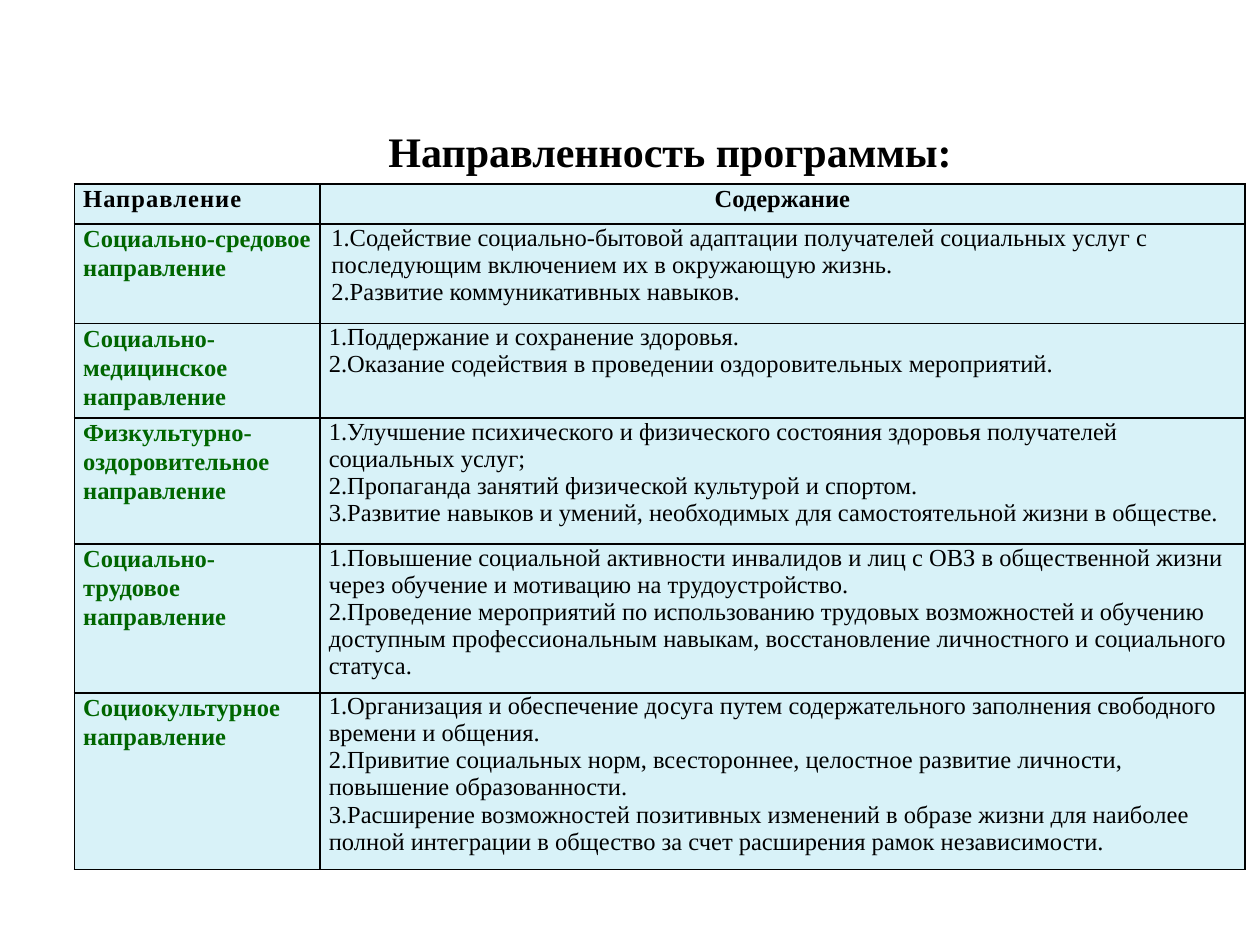
from dataclasses import dataclass

from lxml import etree
from pptx import Presentation
from pptx.dml.color import RGBColor
from pptx.enum.text import MSO_AUTO_SIZE, PP_ALIGN
from pptx.oxml.ns import qn
from pptx.util import Inches, Pt

CENTER, LEFT = PP_ALIGN.CENTER, PP_ALIGN.LEFT
FIT = MSO_AUTO_SIZE.SHAPE_TO_FIT_TEXT
FONT = "Times New Roman"
BLACK, GREEN, PALE = "000000", "006600", "D8F2F8"
WIDTHS = [1.95, 7.34]


@dataclass
class Row:
    height: float
    name: str
    items: list[str]
    indent: float = 0


HEAD = Row(0.32, "Направление", ["Содержание"])
ROWS = [
    Row(0.79, "Социально-средовое направление", [
        "1.Содействие социально-бытовой адаптации получателей социальных услуг с "
        "последующим включением их в окружающую жизнь.",
        "2.Развитие коммуникативных навыков.",
    ], 0.02),
    Row(0.75, "Социально-медицинское направление", [
        "1.Поддержание и сохранение здоровья.",
        "2.Оказание содействия в проведении оздоровительных мероприятий.",
    ]),
    Row(1, "Физкультурно-оздоровительное направление", [
        "1.Улучшение психического и физического состояния здоровья получателей "
        "социальных услуг;",
        "2.Пропаганда занятий физической культурой и спортом.",
        "3.Развитие навыков и умений, необходимых для самостоятельной жизни в обществе.",
    ]),
    Row(1.18, "Социально-трудовое направление", [
        "1.Повышение социальной активности инвалидов и лиц с ОВЗ в общественной жизни "
        "через обучение и мотивацию на трудоустройство.",
        "2.Проведение мероприятий по использованию трудовых возможностей и обучению "
        "доступным профессиональным навыкам, восстановление личностного и социального "
        "статуса.",
    ]),
    Row(1.4, "Социокультурное направление", [
        "1.Организация и обеспечение досуга путем содержательного заполнения свободного "
        "времени и общения.",
        "2.Привитие социальных норм, всестороннее, целостное развитие личности, "
        "повышение образованности.",
        "3.Расширение возможностей позитивных изменений в образе жизни для наиболее "
        "полной интеграции в общество за счет расширения рамок независимости.",
    ]),
]


def paint(fill, color: str) -> None:
    fill.solid()
    fill.fore_color.rgb = RGBColor.from_string(color)


def style(par, size: float, color: str, bold: bool, align=LEFT) -> None:
    par.alignment = align
    for run in par.runs:
        font = run.font
        font.name, font.size, font.bold = FONT, Pt(size), bold
        paint(font.fill, color)


def edge(cell) -> None:
    """Draw a thin black line on all four sides of the cell."""
    props = cell._tc.get_or_add_tcPr()
    for side in ("lnL", "lnR", "lnT", "lnB"):
        line = etree.SubElement(props, qn(f"a:{side}"), w=str(Pt(1)))
        solid = etree.SubElement(line, qn("a:solidFill"))
        etree.SubElement(solid, qn("a:srgbClr"), val=BLACK)


def write(cell, lines: list[str], color: str, bold: bool,
          align=LEFT, indent: float = 0) -> None:
    edge(cell)
    paint(cell.fill, PALE)
    cell.margin_left = cell.margin_right = Inches(0.07)
    cell.margin_top = cell.margin_bottom = 0
    cell.text_frame.text = "\n".join(lines)
    for par in cell.text_frame.paragraphs:
        style(par, 14, color, bold, align)
        if bold:
            par.line_spacing = 1.07
        if indent:
            par._p.get_or_add_pPr().set("marL", str(Inches(indent)))


def add_title(slide) -> None:
    box = slide.shapes.add_textbox(Inches(2.17), Inches(0.95), Inches(6.38), Inches(0.5))
    frame = box.text_frame
    frame.word_wrap = True
    frame.auto_size = FIT
    frame.text = "Направленность программы: "
    style(frame.paragraphs[0], 24, BLACK, True, CENTER)


def add_grid(slide) -> None:
    rows = [HEAD, *ROWS]
    high = sum(row.height for row in rows)
    grid = slide.shapes.add_table(len(rows), len(WIDTHS), Inches(0.59), Inches(1.46),
                                  Inches(sum(WIDTHS)), Inches(high)).table
    for col, width in zip(grid.columns, WIDTHS):
        col.width = Inches(width)
    for i, row in enumerate(rows):
        grid.rows[i].height = Inches(row.height)
        head = row is HEAD
        write(grid.cell(i, 0), [row.name], BLACK if head else GREEN, True)
        write(grid.cell(i, 1), row.items, BLACK, head,
              CENTER if head else LEFT, row.indent)
    first = grid.cell(0, 0).text_frame.paragraphs[0].runs[0]
    first._r.get_or_add_rPr().set("spc", "60")


def main() -> None:
    deck = Presentation()
    deck.slide_width, deck.slide_height = Inches(10), Inches(7.5)
    slide = deck.slides.add_slide(deck.slide_layouts[6])
    add_title(slide)
    add_grid(slide)
    deck.save("out.pptx")


if __name__ == "__main__":
    main()
